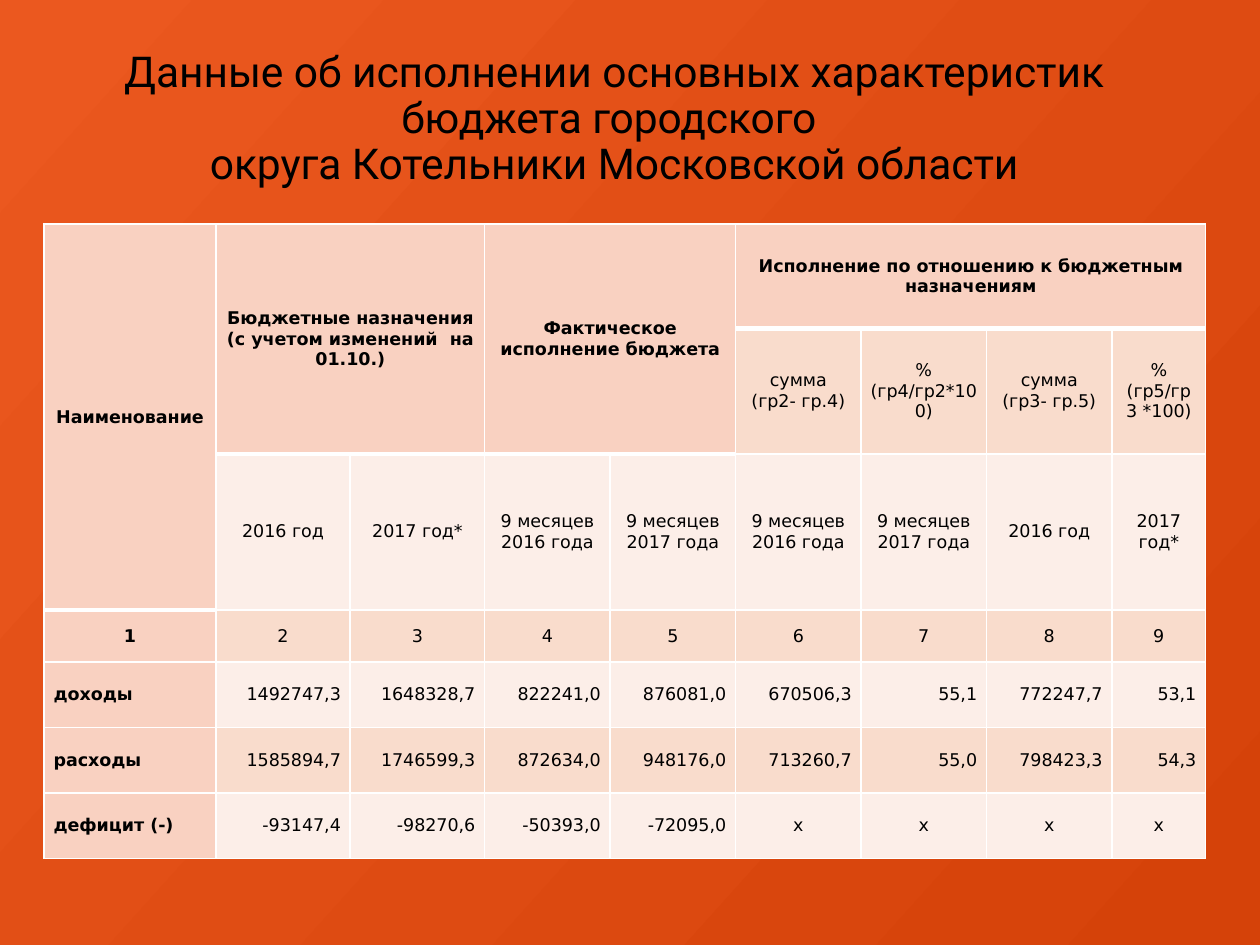
from dataclasses import dataclass

from lxml import etree
from pptx import Presentation
from pptx import util as u
from pptx.dml.color import RGBColor
from pptx.enum import text
from pptx.oxml import ns

COLORS = {
    "bg_light": "EB581F",
    "bg_dark": "D54209",
    "header": "F9D1C1",
    "band_dark": "F9DCCC",
    "band_light": "FCEEE8",
    "border": "FFFFFF",
    "text": "000000",
}
LEFT, CENTER, RIGHT = text.PP_ALIGN.LEFT, text.PP_ALIGN.CENTER, text.PP_ALIGN.RIGHT
COL_WIDTHS = [3.46, 2.71, 2.71] + [2.53] * 5 + [1.89]
ROW_HEIGHTS = [2.1, 2.53, 3.15, 1.05] + [1.32] * 3
BODY_ROW = 4


@dataclass
class Entry:
    text: str
    row: int
    col: int
    rows: int = 1
    cols: int = 1

    @property
    def is_header(self) -> bool:
        return self.row == 0 or self.col == 0

    @property
    def fill(self) -> str:
        if self.is_header:
            return "header"
        return "band_dark" if self.row % 2 else "band_light"

    @property
    def align(self) -> text.PP_ALIGN:
        if self.row < BODY_ROW or self.text == "х":
            return CENTER
        return LEFT if self.col == 0 else RIGHT

    @property
    def bottom_width(self) -> int:
        return 3 if self.row == 0 else 1


HEADERS = [
    Entry("Наименование", 0, 0, rows=3),
    Entry("Бюджетные назначения\n(с учетом изменений  на 01.10.)", 0, 1, rows=2, cols=2),
    Entry("Фактическое исполнение бюджета", 0, 3, rows=2, cols=2),
    Entry("Исполнение по отношению к бюджетным назначениям", 0, 5, cols=4),
]
FORMULAS = ["сумма (гр2- гр.4)", "% (гр4/гр2*100)", "сумма (гр3- гр.5)", "% (гр5/гр3 *100)"]
YEARS = ["2016 год", "2017 год*"]
MONTHS = ["9 месяцев 2016 года", "9 месяцев 2017 года"]
BODY = [
    [str(n) for n in range(1, 10)],
    ["доходы", "1492747,3", "1648328,7", "822241,0", "876081,0",
     "670506,3", "55,1", "772247,7", "53,1"],
    ["расходы", "1585894,7", "1746599,3", "872634,0", "948176,0",
     "713260,7", "55,0", "798423,3", "54,3"],
    ["дефицит (-)", "-93147,4", "-98270,6", "-50393,0", "-72095,0"] + ["х"] * 4,
]


def rgb(name: str) -> RGBColor:
    return RGBColor.from_string(COLORS[name])


def row_entries(row: int, first_col: int, values: list[str]) -> list[Entry]:
    return [Entry(value, row, col) for col, value in enumerate(values, first_col)]


def style_paragraph(p, font: str, size: float, bold: bool, align: text.PP_ALIGN) -> None:
    p.alignment = align
    p.font.name = font
    p.font.size = u.Pt(size)
    p.font.bold = bold
    p.font.color.rgb = rgb("text")


def add_border(cell, side: str, width: float) -> None:
    props = cell._tc.get_or_add_tcPr()
    line = etree.SubElement(props, ns.qn(f"a:ln{side}"), w=str(u.Pt(width)))
    fill = etree.SubElement(line, ns.qn("a:solidFill"))
    etree.SubElement(fill, ns.qn("a:srgbClr"), val=COLORS["border"])


def draw_entry(table, entry: Entry) -> None:
    origin = table.cell(entry.row, entry.col)
    last_row, last_col = entry.row + entry.rows - 1, entry.col + entry.cols - 1
    if entry.rows * entry.cols > 1:
        origin.merge(table.cell(last_row, last_col))
    for row in range(entry.row, last_row + 1):
        for col in range(entry.col, last_col + 1):
            cell = table.cell(row, col)
            add_border(cell, "L", 1)
            add_border(cell, "R", 1)
            if row == 0:
                add_border(cell, "T", 1)
            add_border(cell, "B", entry.bottom_width)
            cell.fill.solid()
            cell.fill.fore_color.rgb = rgb(entry.fill)
    origin.margin_left = origin.margin_right = u.Cm(0.19)
    origin.margin_top = origin.margin_bottom = u.Cm(0)
    origin.vertical_anchor = text.MSO_ANCHOR.MIDDLE
    origin.text = entry.text
    for p in origin.text_frame.paragraphs:
        style_paragraph(p, "DejaVu Sans", 10, entry.is_header, entry.align)


def draw_background(s) -> None:
    fill = s.background.fill
    fill.gradient()
    fill.gradient_angle = 318
    for stop, name in zip(fill.gradient_stops, ("bg_light", "bg_dark")):
        stop.color.rgb = rgb(name)


def draw_title(s) -> None:
    sp = s.shapes.add_textbox(u.Cm(1.27), u.Cm(0.91), u.Cm(22.23), u.Cm(4.19))
    tf = sp.text_frame
    tf.word_wrap = True
    tf.vertical_anchor = text.MSO_ANCHOR.MIDDLE
    tf.margin_bottom = u.Cm(1.3)
    p = tf.paragraphs[0]
    p.text = ("Данные об исполнении основных характеристик бюджета городского \v"
              "округа Котельники Московской области")
    p.line_spacing = 0.9
    style_paragraph(p, "Roboto", 24.3, False, CENTER)


def draw_table(s) -> None:
    frame = s.shapes.add_table(
        len(ROW_HEIGHTS), len(COL_WIDTHS), u.Cm(0.89), u.Cm(4.52),
        u.Cm(sum(COL_WIDTHS)), u.Cm(sum(ROW_HEIGHTS)))
    table = frame.table
    for column, width in zip(table.columns, COL_WIDTHS):
        column.width = u.Cm(width)
    for row, height in zip(table.rows, ROW_HEIGHTS):
        row.height = u.Cm(height)
    entries = HEADERS + row_entries(1, 5, FORMULAS)
    entries += row_entries(2, 1, YEARS + MONTHS * 2 + YEARS)
    for row, values in enumerate(BODY, BODY_ROW - 1):
        entries += row_entries(row, 0, values)
    for entry in entries:
        draw_entry(table, entry)


def main() -> None:
    prs = Presentation()
    prs.slide_width, prs.slide_height = u.Cm(25.4), u.Cm(19.05)
    s = prs.slides.add_slide(prs.slide_layouts[6])
    draw_background(s)
    draw_title(s)
    draw_table(s)
    prs.save("out.pptx")


if __name__ == "__main__":
    main()
